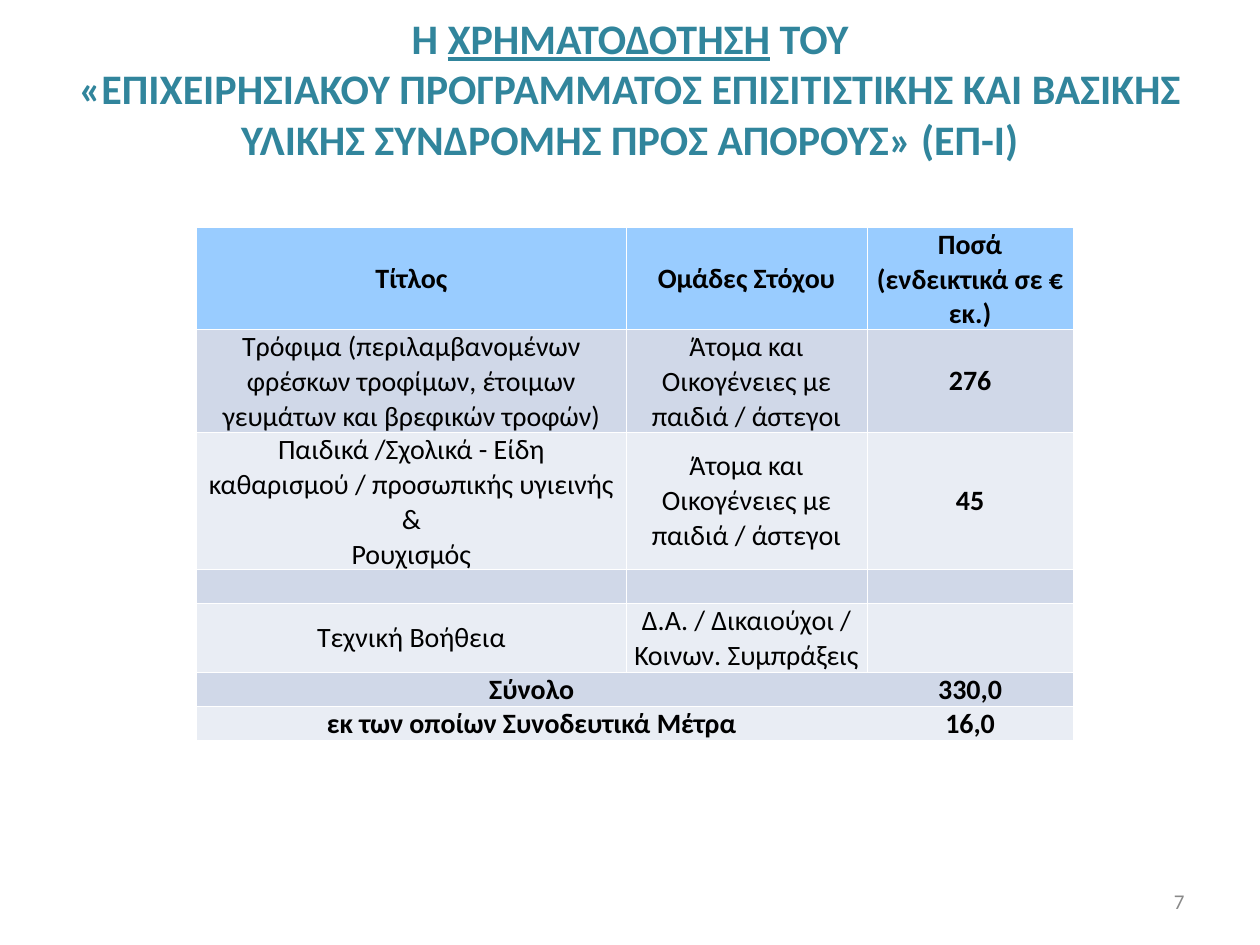
from lxml.etree import SubElement as Sub
from pptx import Presentation
from pptx.dml.color import RGBColor as RGB
from pptx.enum.text import MSO_ANCHOR as Anchor, PP_ALIGN as Align
from pptx.oxml.ns import qn
from pptx.util import Inches, Pt

TEAL = RGB(0x31, 0x85, 0x9C)
GREY = RGB(0x89, 0x89, 0x89)
BLACK = RGB(0, 0, 0)
WHITE = RGB(0xFF, 0xFF, 0xFF)
HEAD = RGB(0x99, 0xCC, 0xFF)
BANDS = RGB(0xE9, 0xED, 0xF4), RGB(0xD0, 0xD8, 0xE8)

COLS = 3.41, 1.91, 1.64
HEIGHTS = 0.8, 0.8, 1.06, 0.27, 0.53, 0.27, 0.27
GROUP = "Άτομα και Οικογένειες με παιδιά / άστεγοι"
ROWS = [
    ("Τίτλος", "Ομάδες Στόχου", "Ποσά\n(ενδεικτικά σε € εκ.)"),
    ("Τρόφιμα (περιλαμβανομένων φρέσκων τροφίμων, έτοιμων γευμάτων "
     "και βρεφικών τροφών)", GROUP, "276"),
    ("Παιδικά /Σχολικά - Είδη καθαρισμού / προσωπικής υγιεινής &\n"
     "Ρουχισμός", GROUP, "45"),
    ("", "", ""),
    ("Τεχνική Βοήθεια", "Δ.Α. / Δικαιούχοι / Κοινων. Συμπράξεις", ""),
    ("Σύνολο", "", "330,0"),
    ("εκ των οποίων Συνοδευτικά Μέτρα", "", "16,0"),
]
TOTALS = 5, 6  # rows whose first two cells are merged


def style(para, size, color, bold=False, align=Align.CENTER):
    para.alignment = align
    font = para.font
    font.name, font.size, font.bold = "Calibri", Pt(size), bold
    font.color.rgb = color


def add_box(slide, left, top, width, height):
    box = slide.shapes.add_textbox(
        Inches(left), Inches(top), Inches(width), Inches(height))
    frame = box.text_frame
    frame.word_wrap = True
    frame.vertical_anchor = Anchor.MIDDLE
    return frame.paragraphs[0]


def add_title(slide):
    para = add_box(slide, 0.5, 0.05, 9, 1.3)
    style(para, 24, TEAL, bold=True)
    para.add_run().text = "Η "
    key = para.add_run()
    key.text = "ΧΡΗΜΑΤΟΔΟΤΗΣΗ"
    key.font.underline = True
    para.add_run().text = " ΤΟΥ"
    para.add_line_break()
    para.add_run().text = ("«ΕΠΙΧΕΙΡΗΣΙΑΚΟΥ ΠΡΟΓΡΑΜΜΑΤΟΣ ΕΠΙΣΙΤΙΣΤΙΚΗΣ ΚΑΙ "
                           "ΒΑΣΙΚΗΣ ΥΛΙΚΗΣ ΣΥΝΔΡΟΜΗΣ ΠΡΟΣ ΑΠΟΡΟΥΣ» (ΕΠ-Ι)")


def set_edges(cell, bare, widths):
    props = cell._tc.get_or_add_tcPr()
    for side in "LRTB":
        line = Sub(props, qn(f"a:ln{side}"), w=str(Pt(widths.get(side, 0.23))))
        if side in bare:
            Sub(line, qn("a:noFill"))
        else:
            fill = Sub(line, qn("a:solidFill"))
            Sub(fill, qn("a:srgbClr"), val=str(WHITE))


def fill_cell(cell, text, color, bold, bare, widths):
    cell.margin_left = cell.margin_right = 0
    cell.margin_top = cell.margin_bottom = 0
    cell.vertical_anchor = Anchor.MIDDLE
    set_edges(cell, bare, widths)
    cell.fill.solid()
    cell.fill.fore_color.rgb = color
    cell.text_frame.text = text
    for para in cell.text_frame.paragraphs:
        style(para, 16, BLACK, bold)
        para.line_spacing = 1.02


def add_grid(slide):
    grid = slide.shapes.add_table(
        len(ROWS), len(COLS), Inches(1.56), Inches(1.8),
        Inches(sum(COLS)), Inches(sum(HEIGHTS))).table
    grid.first_row = grid.horz_banding = False
    for col, width in zip(grid.columns, COLS):
        col.width = Inches(width)
    for row, height in zip(grid.rows, HEIGHTS):
        row.height = Inches(height)
    for r, texts in enumerate(ROWS):
        color = BANDS[r % 2] if r else HEAD
        widths = {0: {"B": 0.37}, 1: {"T": 0.37}}.get(r, {})
        for c, text in enumerate(texts):
            # Total rows have no upright lines inside
            bare = ("R", "LR", "L")[c] if r in TOTALS else ""
            bold = r == 0 or r in TOTALS or c == 2
            fill_cell(grid.cell(r, c), text, color, bold, bare, widths)
        if r in TOTALS:
            grid.cell(r, 0).merge(grid.cell(r, 1))


def add_number(slide):
    para = add_box(slide, 7.17, 6.95, 2.33, 0.4)
    para.text = "7"
    style(para, 12, GREY, align=Align.RIGHT)


def main():
    deck = Presentation()
    deck.slide_width, deck.slide_height = Inches(10), Inches(7.5)
    slide = deck.slides.add_slide(deck.slide_layouts[6])
    add_title(slide)
    add_grid(slide)
    add_number(slide)
    deck.save("out.pptx")


if __name__ == "__main__":
    main()
